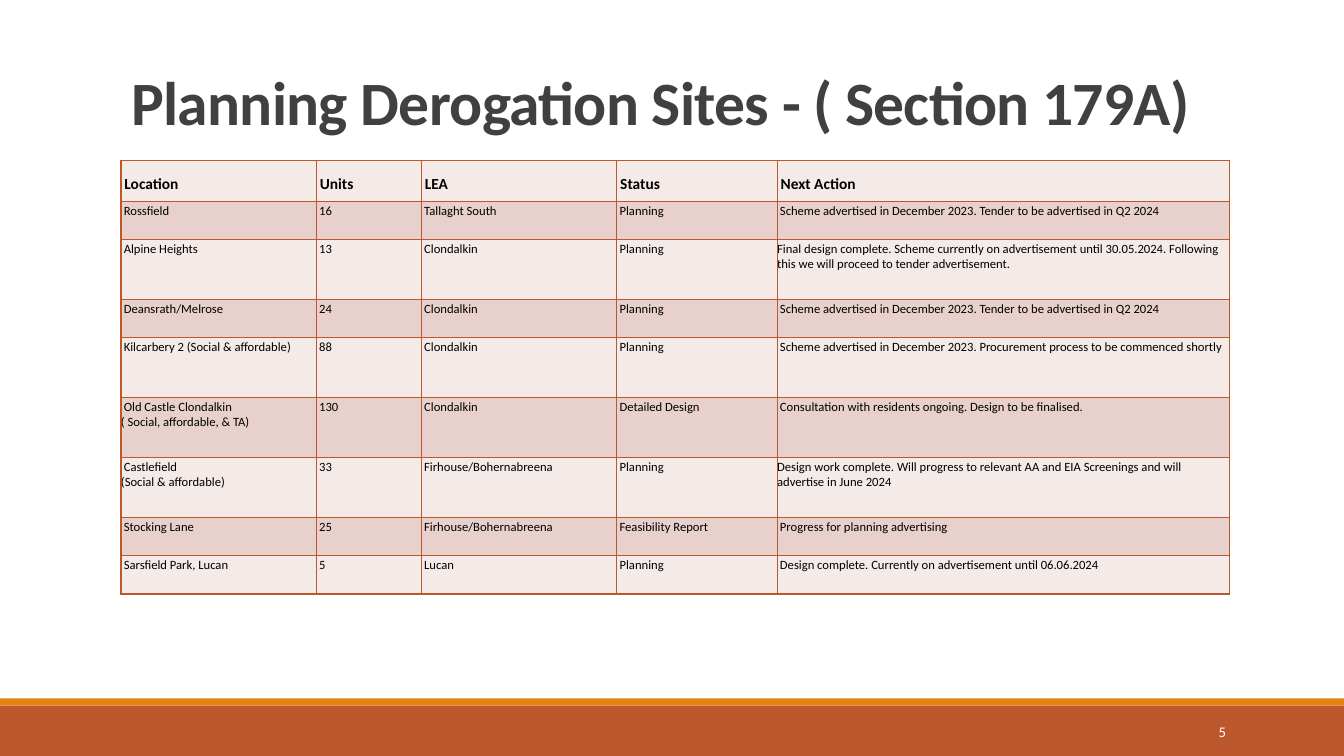
from lxml.etree import SubElement
from pptx import Presentation
from pptx.dml.color import RGBColor
from pptx.enum.shapes import MSO_SHAPE as Shape
from pptx.enum.text import MSO_ANCHOR as Anchor, MSO_AUTO_SIZE as AutoSize, PP_ALIGN as Align
from pptx.oxml.ns import qn
from pptx.util import Pt

TITLE = "Planning Derogation Sites - ( Section 179A)"
PAGE_NUMBER = "5"
FONT = "Calibri"
COLORS = {
    "title": "404040", "text": "000000", "page": "FFFFFF",
    "footer": "BD582C", "stripe": "E48312", "border": "BD582C",
    "light": "F4EAE8", "dark": "E8D1CD",
}
ROWS = [
    (" Location", " Units", " LEA", " Status", " Next Action"),
    (" Rossfield", " 16", " Tallaght South", " Planning\u00a0",
     " Scheme advertised in December 2023. Tender to be advertised in Q2 2024"),
    (" Alpine Heights", " 13", " Clondalkin", " Planning",
     "Final design complete. Scheme currently on advertisement until 30.05.2024. "
     "Following this we will proceed to tender advertisement."),
    (" Deansrath/Melrose", " 24", " Clondalkin", " Planning\u00a0",
     " Scheme advertised in December 2023. Tender to be advertised in Q2 2024"),
    (" Kilcarbery 2 (Social & affordable)", " 88", " Clondalkin", " Planning",
     " Scheme advertised in December 2023. Procurement process to be commenced shortly"),
    (" Old Castle Clondalkin\n( Social, affordable, & TA)", " 130", " Clondalkin",
     " Detailed Design", " Consultation with residents ongoing. Design to be finalised."),
    (" Castlefield\n(Social & affordable)", " 33", " Firhouse/Bohernabreena", " Planning",
     "Design work complete. Will progress to relevant AA and EIA Screenings "
     "and will advertise in June 2024"),
    (" Stocking Lane", " 25", " Firhouse/Bohernabreena", " Feasibility Report",
     " Progress for planning advertising"),
    (" Sarsfield Park, Lucan", " 5", " Lucan", " Planning",
     " Design complete. Currently on advertisement until 06.06.2024"),
]
HEADER_HEIGHT, SHORT, TALL = 29.2, 27.4, 42.8
ROW_HEIGHTS = [HEADER_HEIGHT, SHORT, TALL, SHORT, TALL, TALL, TALL, SHORT, SHORT]
COLUMN_WIDTHS = [139.6, 75, 139.6, 114.6, 323.2]
SLIDE_WIDTH, SLIDE_HEIGHT = 960, 540
LEFT, WIDTH = 86.4, 792
FOOTER_TOP, STRIPE_TOP = 504, 498.8


def color(name):
    return RGBColor.from_string(COLORS[name])


def style(paragraph, size, color_name, bold=False):
    font = paragraph.font
    font.name, font.size, font.bold = FONT, Pt(size), bold
    font.color.rgb = color(color_name)


def add_band(slide, top, height, color_name):
    band = slide.shapes.add_shape(Shape.RECTANGLE, 0, Pt(top), Pt(SLIDE_WIDTH), Pt(height))
    band.shadow.inherit = False
    band.fill.solid()
    band.fill.fore_color.rgb = color(color_name)
    band.line.fill.background()


def add_borders(cell):
    properties = cell._tc.get_or_add_tcPr()
    for position, side in enumerate(("lnL", "lnR", "lnT", "lnB")):
        line = properties.makeelement(qn(f"a:{side}"), {"w": str(Pt(1))})
        fill = SubElement(line, qn("a:solidFill"))
        SubElement(fill, qn("a:srgbClr"), val=COLORS["border"])
        properties.insert(position, line)


def add_title(slide):
    title = slide.shapes.title
    title.left, title.top, title.width, title.height = Pt(LEFT), Pt(22.3), Pt(WIDTH), Pt(79.9)
    frame = title.text_frame
    frame.text = TITLE
    frame.auto_size = AutoSize.NONE
    frame.vertical_anchor = Anchor.BOTTOM
    paragraph = frame.paragraphs[0]
    paragraph.alignment = Align.LEFT
    paragraph.line_spacing = 0.85
    style(paragraph, 44, "title", bold=True)
    paragraph.runs[0]._r.get_or_add_rPr().set("spc", "-50")


def add_page_number(slide):
    box = slide.shapes.add_textbox(Pt(779.8), Pt(508.3), Pt(103), Pt(28.8))
    frame = box.text_frame
    frame.word_wrap = True
    frame.vertical_anchor = Anchor.MIDDLE
    frame.text = PAGE_NUMBER
    paragraph = frame.paragraphs[0]
    paragraph.alignment = Align.RIGHT
    paragraph.space_after = Pt(6)
    style(paragraph, 10.5, "page")


def add_sites_table(slide):
    frame = slide.shapes.add_table(len(ROWS), len(COLUMN_WIDTHS), Pt(LEFT), Pt(114.5),
                                   Pt(WIDTH), Pt(sum(ROW_HEIGHTS)))
    table = frame.table
    table.horz_banding = False
    for column, width in zip(table.columns, COLUMN_WIDTHS):
        column.width = Pt(width)
    for index, (row, height, texts) in enumerate(zip(table.rows, ROW_HEIGHTS, ROWS)):
        row.height = Pt(height)
        is_header = index == 0
        for cell, text in zip(row.cells, texts):
            cell.text = text
            cell.margin_left, cell.margin_right = 0, Pt(4.3)
            cell.margin_top, cell.margin_bottom = Pt(0.7 if is_header else 1.4), Pt(5)
            cell.vertical_anchor = Anchor.BOTTOM if is_header else Anchor.TOP
            cell.fill.solid()
            cell.fill.fore_color.rgb = color("dark" if index % 2 else "light")
            add_borders(cell)
            for paragraph in cell.text_frame.paragraphs:
                style(paragraph, 11 if is_header else 9, "text", bold=is_header)


def main():
    presentation = Presentation()
    presentation.slide_width, presentation.slide_height = Pt(SLIDE_WIDTH), Pt(SLIDE_HEIGHT)
    slide = presentation.slides.add_slide(presentation.slide_layouts[5])
    add_band(slide, FOOTER_TOP, SLIDE_HEIGHT - FOOTER_TOP, "footer")
    add_band(slide, STRIPE_TOP, FOOTER_TOP - STRIPE_TOP, "stripe")
    add_title(slide)
    add_page_number(slide)
    add_sites_table(slide)
    presentation.save("out.pptx")


if __name__ == "__main__":
    main()
